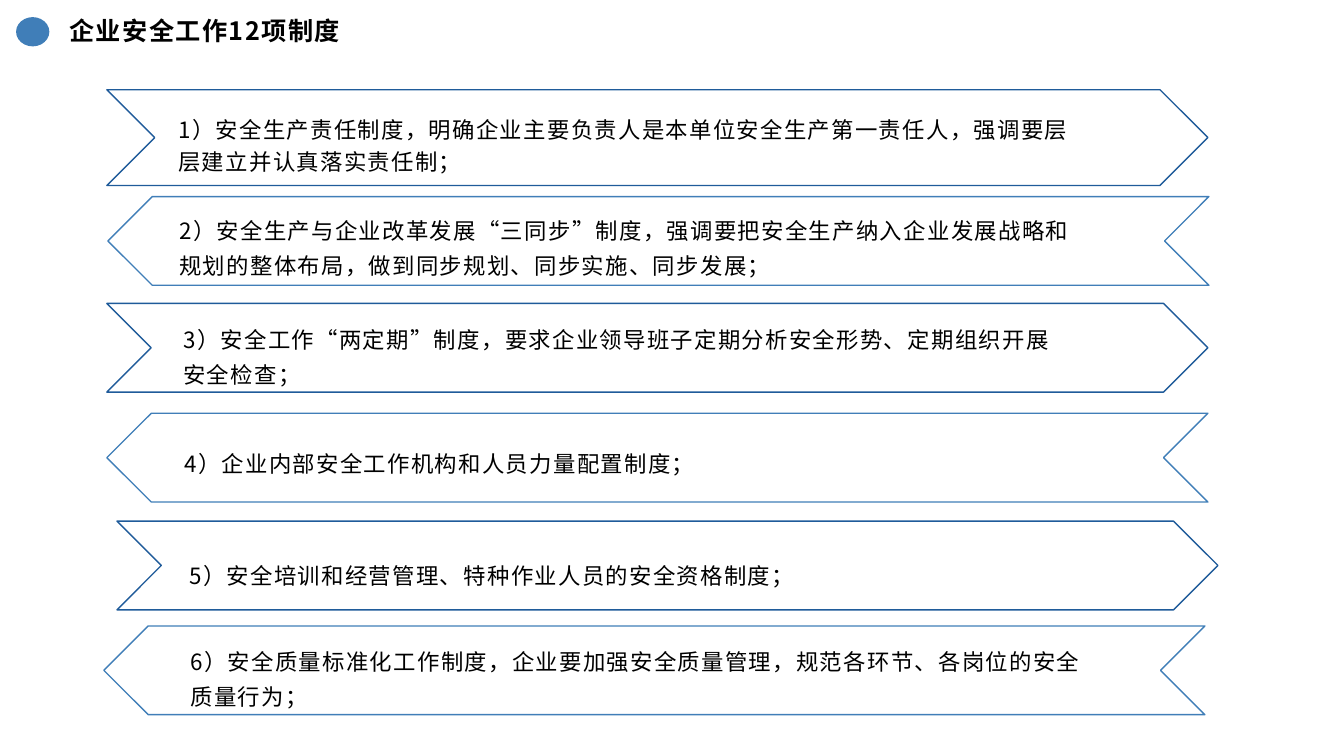
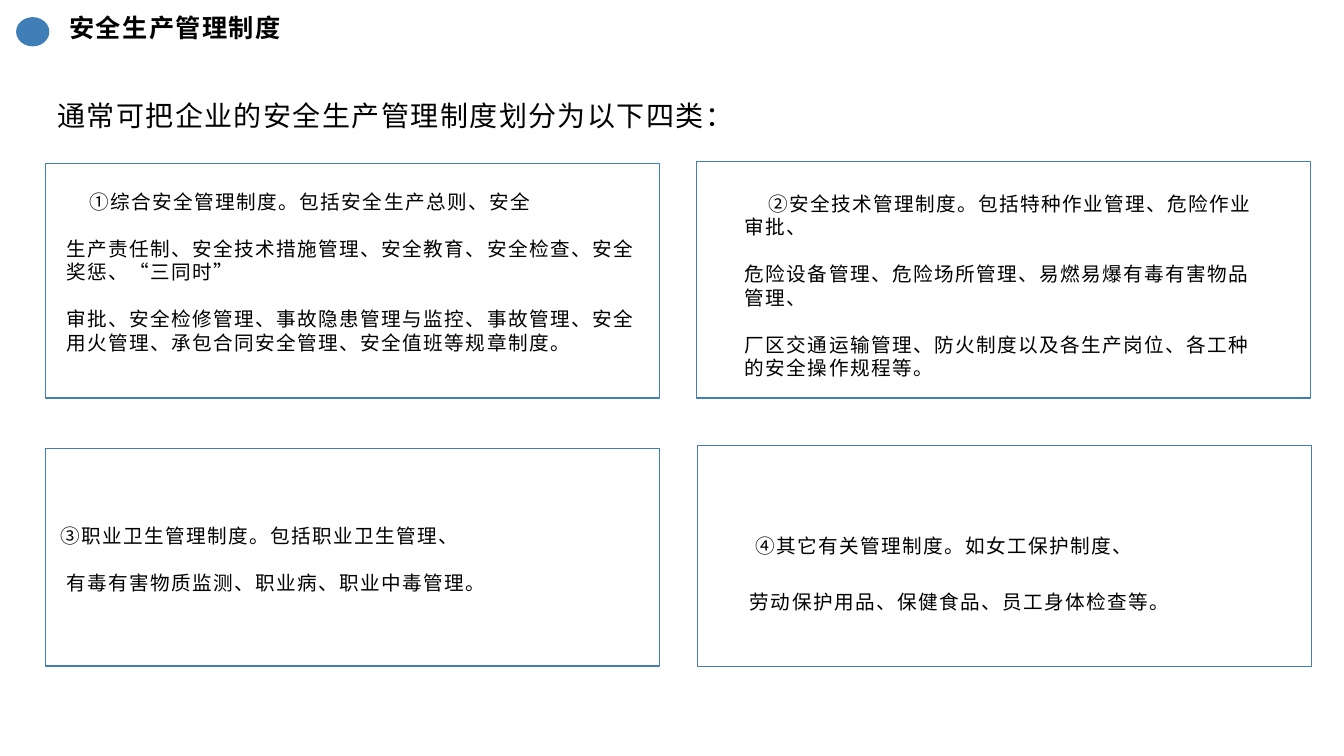
from lxml import etree
from pptx import Presentation
from pptx.dml.color import RGBColor
from pptx.enum.shapes import MSO_SHAPE
from pptx.enum.text import MSO_ANCHOR, MSO_AUTO_SIZE, PP_ALIGN
from pptx.oxml.ns import qn
from pptx.util import Inches, Pt

ELLIPSE, CHEVRON, RECT = MSO_SHAPE.OVAL, MSO_SHAPE.CHEVRON, MSO_SHAPE.RECTANGLE
TOP, LEFT = MSO_ANCHOR.TOP, PP_ALIGN.LEFT
GROW = MSO_AUTO_SIZE.SHAPE_TO_FIT_TEXT

BLUE = RGBColor(0x40, 0x7E, 0xB8)
DARK_BLUE = RGBColor(0x1F, 0x5B, 0x9A)
BLACK = RGBColor(0, 0, 0)
FONT = "Noto Sans CJK SC"

RULES_TITLE = "企业安全工作12项制度"
RULES = [
    dict(arrow=(1.06, 0.89, 0.95), text=(1.67, 1.1), spacing=(1, 1.2), lines=[
        "1）安全生产责任制度，明确企业主要负责人是本单位安全生产第一责任人，强调要层",
        "层建立并认真落实责任制；"]),
    dict(arrow=(1.07, 1.95, 0.88), text=(1.68, 2.03), spacing=(1.3, 1.3), lines=[
        "2）安全生产与企业改革发展“三同步”制度，强调要把安全生产纳入企业发展战略和",
        "规划的整体布局，做到同步规划、同步实施、同步发展；"]),
    dict(arrow=(1.06, 3.01, 0.88), text=(1.72, 3.11), spacing=(1.3, 1.3), lines=[
        "3）安全工作“两定期”制度，要求企业领导班子定期分析安全形势、定期组织开展",
        "安全检查；"]),
    dict(arrow=(1.06, 4.1, 0.88), text=(1.73, 4.34), spacing=(1.3,), lines=[
        "4）企业内部安全工作机构和人员力量配置制度；"]),
    dict(arrow=(1.16, 5.17, 0.88), text=(1.78, 5.45), spacing=(1.3,), lines=[
        "5）安全培训和经营管理、特种作业人员的安全资格制度；"]),
    dict(arrow=(1.03, 6.21, 0.88), text=(1.79, 6.3), spacing=(1.3, 1.3), lines=[
        "6）安全质量标准化工作制度，企业要加强安全质量管理，规范各环节、各岗位的安全",
        "质量行为；"]),
]

CLASSES_TITLE = "安全生产管理制度"
CLASSES_INTRO = "通常可把企业的安全生产管理制度划分为以下四类："
CLASSES = [
    dict(frame=(0.45, 1.62, 6.09, 2.33), text=(0.56, 1.83, 5.99, 1.98),
         indents=(0.23, 0, 0), spacing=1, gap=16.8, lines=[
        "①综合安全管理制度。包括安全生产总则、安全",
        "生产责任制、安全技术措施管理、安全教育、安全检查、安全奖惩、“三同时”",
        "审批、安全检修管理、事故隐患管理与监控、事故管理、安全用火管理、承包合同安全管理、安全值班等规章制度。"]),
    dict(frame=(6.91, 1.6, 6.09, 2.35), text=(7.29, 1.85, 5.34, 1.98),
         indents=(0.23, 0, 0), spacing=1, gap=16.8, lines=[
        "②安全技术管理制度。包括特种作业管理、危险作业审批、",
        "危险设备管理、危险场所管理、易燃易爆有毒有害物品管理、",
        "厂区交通运输管理、防火制度以及各生产岗位、各工种的安全操作规程等。"]),
    dict(frame=(0.45, 4.45, 6.09, 2.16), text=(0.5, 5.15, 5.88, 0.8),
         indents=(0, 0.06), spacing=1, gap=16.8, lines=[
        "③职业卫生管理制度。包括职业卫生管理、",
        "有毒有害物质监测、职业病、职业中毒管理。"]),
    dict(frame=(6.92, 4.42, 6.09, 2.19), text=(7.34, 5.2, 5.6, 0.95),
         indents=(0.05, 0), spacing=1.2, gap=20.2, lines=[
        "④其它有关管理制度。如女工保护制度、",
        "劳动保护用品、保健食品、员工身体检查等。"]),
]


def add_shape(s, kind, box, fill=None, line=None):
    sp = s.shapes.add_shape(kind, *map(Inches, box))
    sp.shadow.inherit = False
    if fill is None:
        sp.fill.background()
    else:
        sp.fill.solid()
        sp.fill.fore_color.rgb = fill
    if line is None:
        sp.line.fill.background()
    else:
        sp.line.color.rgb = line
        sp.line.width = Pt(1)
    return sp


def add_text(s, box, lines, size, bold=False, spacing=None, indents=None, gap=0):
    tf = s.shapes.add_textbox(*map(Inches, box)).text_frame
    tf.word_wrap = True
    tf.auto_size = GROW
    tf.vertical_anchor = TOP
    for i, line in enumerate(lines):
        p = tf.add_paragraph() if i else tf.paragraphs[0]
        p.text = line
        p.alignment = LEFT
        p.line_spacing = float(spacing[i]) if spacing else 1.0
        p.space_before = Pt(gap if i else 0)
        if indents:
            p._p.get_or_add_pPr().set("indent", str(Inches(indents[i])))
        font = p.font
        font.size = Pt(size)
        font.bold = bold
        font.name = FONT
        font.color.rgb = BLACK
        font._rPr.set("spc", "100")
        etree.SubElement(font._rPr, qn("a:ea")).set("typeface", FONT)


def add_slide(prs, title, box):
    s = prs.slides.add_slide(prs.slide_layouts[6])
    add_shape(s, ELLIPSE, (0.16, 0.17, 0.33, 0.29), fill=BLUE)
    add_text(s, box, [title], 18, bold=True)
    return s


def build_rules(prs):
    s = add_slide(prs, RULES_TITLE, (0.59, 0.1, 2.94, 0.4))
    for i, rule in enumerate(RULES):
        left, top, height = rule["arrow"]
        points_left = i % 2 == 1
        sp = add_shape(s, CHEVRON, (left, top, 10.92, height),
                       line=BLUE if points_left else DARK_BLUE)
        sp.rotation = 180 if points_left else 0
        lines = rule["lines"]
        add_text(s, (*rule["text"], 9.8, 0.4 + 0.35 * len(lines)), lines, 16,
                 spacing=rule["spacing"])


def build_classes(prs):
    s = add_slide(prs, CLASSES_TITLE, (0.59, 0.07, 3.81, 0.4))
    add_text(s, (0.47, 0.93, 6.9, 0.44), [CLASSES_INTRO], 20)
    for item in CLASSES:
        lines = item["lines"]
        add_shape(s, RECT, item["frame"], line=BLUE)
        add_text(s, item["text"], lines, 14, spacing=[item["spacing"]] * len(lines),
                 indents=item["indents"], gap=item["gap"])


def main():
    prs = Presentation()
    prs.slide_width, prs.slide_height = Inches(13.33), Inches(7.5)
    build_rules(prs)
    build_classes(prs)
    prs.save("out.pptx")


if __name__ == "__main__":
    main()
